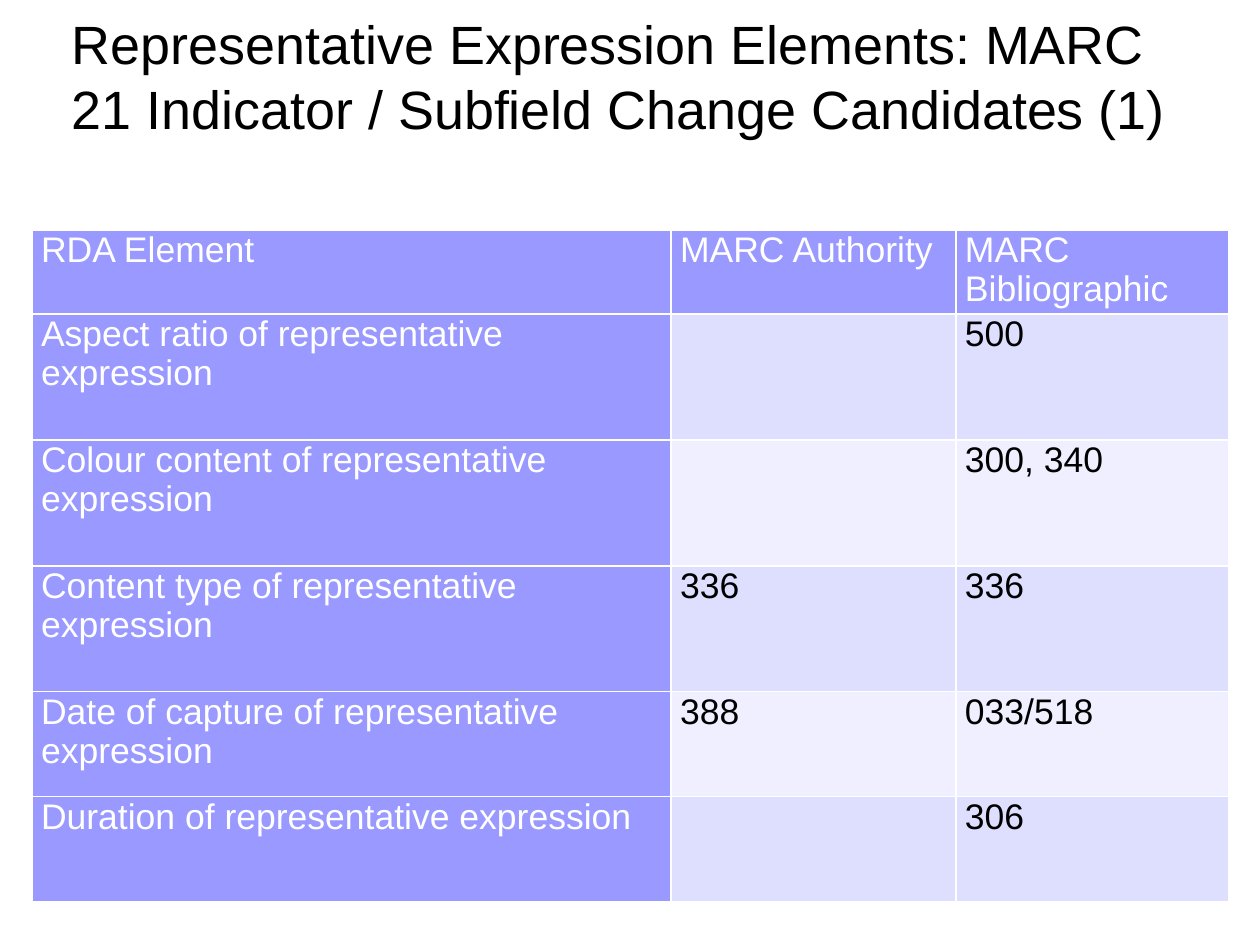
from lxml import etree
from pptx import Presentation
from pptx.dml.color import RGBColor
from pptx.enum.text import MSO_ANCHOR, MSO_AUTO_SIZE, PP_ALIGN
from pptx.oxml.ns import qn
from pptx.util import Pt

EMU_PER_PX = 914400 / 88.2
LEFT, JUSTIFY = PP_ALIGN.LEFT, PP_ALIGN.JUSTIFY
TOP, BOTTOM = MSO_ANCHOR.TOP, MSO_ANCHOR.BOTTOM
NO_AUTOFIT = MSO_AUTO_SIZE.NONE

FONT = "Arial"
BLACK, WHITE = "000000", "FFFFFF"
HEADER_FILL = "9999FF"
BAND_FILLS = ("DEDEFF", "EFEFFF")

TITLE = ("Representative Expression Elements: MARC 21 Indicator / "
         "Subfield Change Candidates (1)")
COLUMN_WIDTHS = (639, 285, 273)
ROW_HEIGHTS = (84, 126, 126, 126, 105, 105)
ROWS = (
    ("RDA Element", "MARC Authority", "MARC Bibliographic"),
    ("Aspect ratio of representative expression", "", "500"),
    ("Colour content of representative expression", "", "300, 340"),
    ("Content type of representative expression", "336", "336"),
    ("Date of capture of representative expression", "388", "033/518"),
    ("Duration of representative expression", "", "306"),
)


def px(length):
    return round(length * EMU_PER_PX)


def color(value):
    return RGBColor.from_string(value)


def write_text(frame, text, size, fill=BLACK, align=LEFT):
    paragraph = frame.paragraphs[0]
    paragraph.alignment = align
    paragraph.font.size = Pt(size)
    if not text:
        return
    run = paragraph.add_run()
    run.text = text
    run.font.name = FONT
    run.font.size = Pt(size)
    run.font.bold = False
    run.font.color.rgb = color(fill)


def set_borders(cell, value, width):
    """Draw all four sides; the lines must precede the fill in the XML."""
    properties = cell._tc.get_or_add_tcPr()
    for index, side in enumerate(("a:lnL", "a:lnR", "a:lnT", "a:lnB")):
        line = etree.Element(qn(side), w=str(Pt(width)))
        fill = etree.SubElement(line, qn("a:solidFill"))
        etree.SubElement(fill, qn("a:srgbClr"), val=value)
        properties.insert(index, line)


def add_title(slide, left, top, width, height):
    title = slide.shapes.title
    title.left, title.top = px(left), px(top)
    title.width, title.height = px(width), px(height)
    frame = title.text_frame
    frame.word_wrap = True
    frame.auto_size = NO_AUTOFIT
    frame.vertical_anchor = BOTTOM
    frame.margin_left = frame.margin_right = px(9)
    frame.margin_top, frame.margin_bottom = 0, px(19)
    write_text(frame, TITLE, 44)


def format_cell(cell, text, row, column):
    is_heading = row == 0 or column == 0
    cell.margin_left = cell.margin_right = px(9)
    cell.margin_top = cell.margin_bottom = 0
    cell.vertical_anchor = TOP
    cell.fill.solid()
    cell.fill.fore_color.rgb = color(
        HEADER_FILL if is_heading else BAND_FILLS[(row - 1) % 2])
    set_borders(cell, WHITE, 1)
    write_text(cell.text_frame, text, 29,
               fill=WHITE if is_heading else BLACK,
               align=LEFT if row and column == 0 else JUSTIFY)


def add_elements_table(slide, left, top):
    table = slide.shapes.add_table(
        len(ROWS), len(COLUMN_WIDTHS), px(left), px(top),
        px(sum(COLUMN_WIDTHS)), px(sum(ROW_HEIGHTS))).table
    for column, width in zip(table.columns, COLUMN_WIDTHS):
        column.width = px(width)
    for row, height in zip(table.rows, ROW_HEIGHTS):
        row.height = px(height)
    for row, texts in enumerate(ROWS):
        for column, text in enumerate(texts):
            format_cell(table.cell(row, column), text, row, column)


def main():
    presentation = Presentation()
    presentation.slide_width, presentation.slide_height = px(1260), px(945)
    slide = presentation.slides.add_slide(presentation.slide_layouts[5])
    add_title(slide, 63, 51, 1133, 108)
    add_elements_table(slide, 32, 230)
    presentation.save("out.pptx")


if __name__ == "__main__":
    main()
